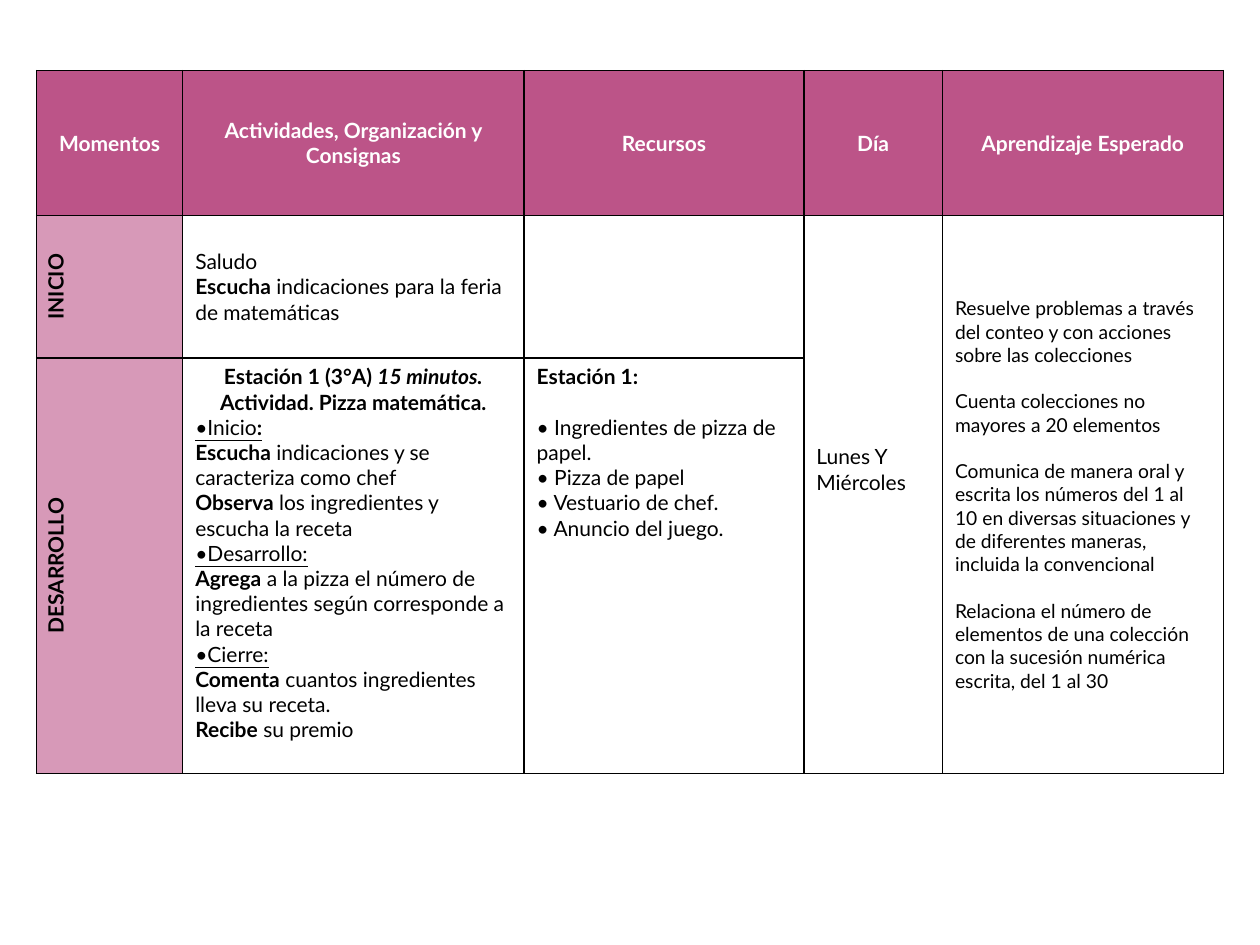
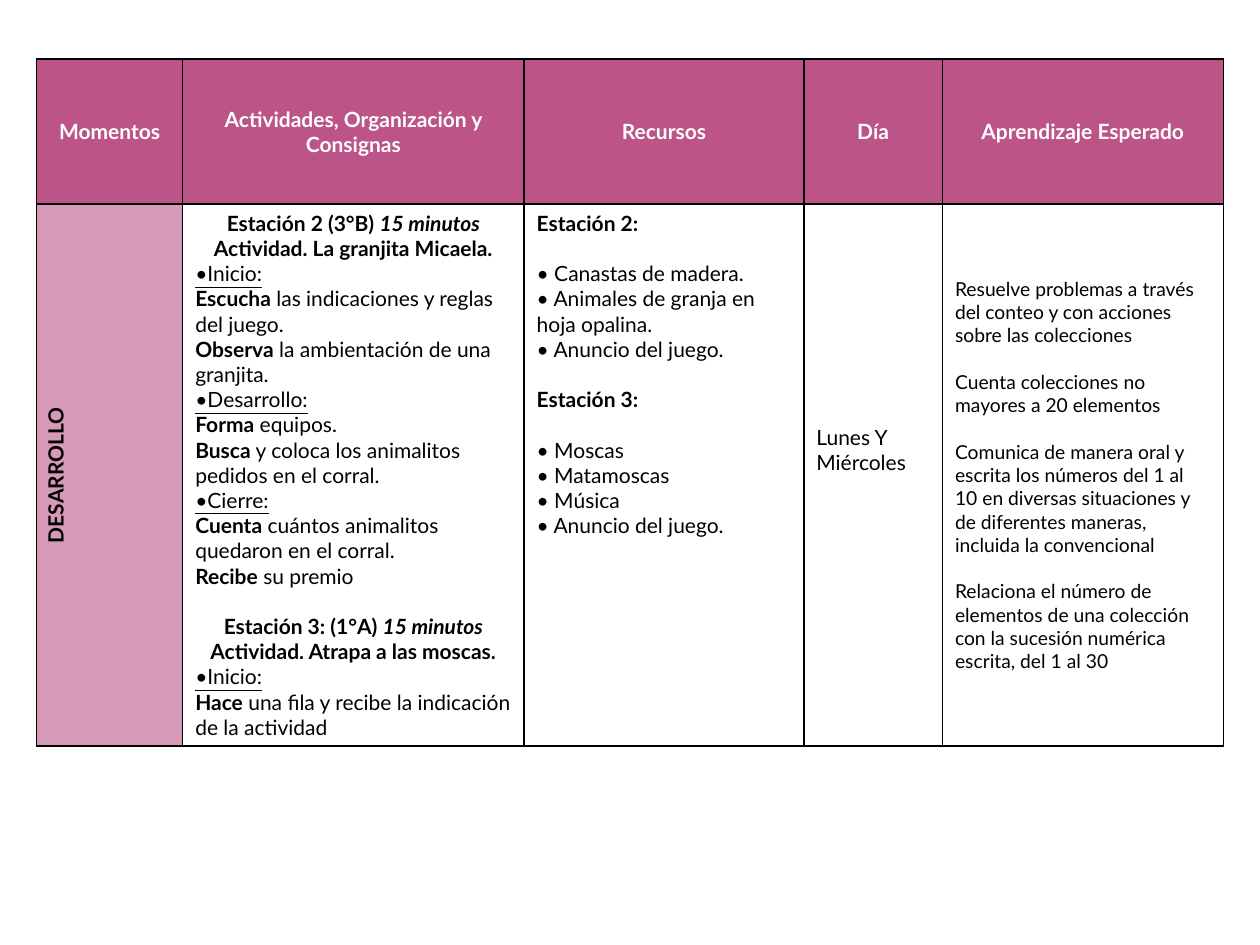
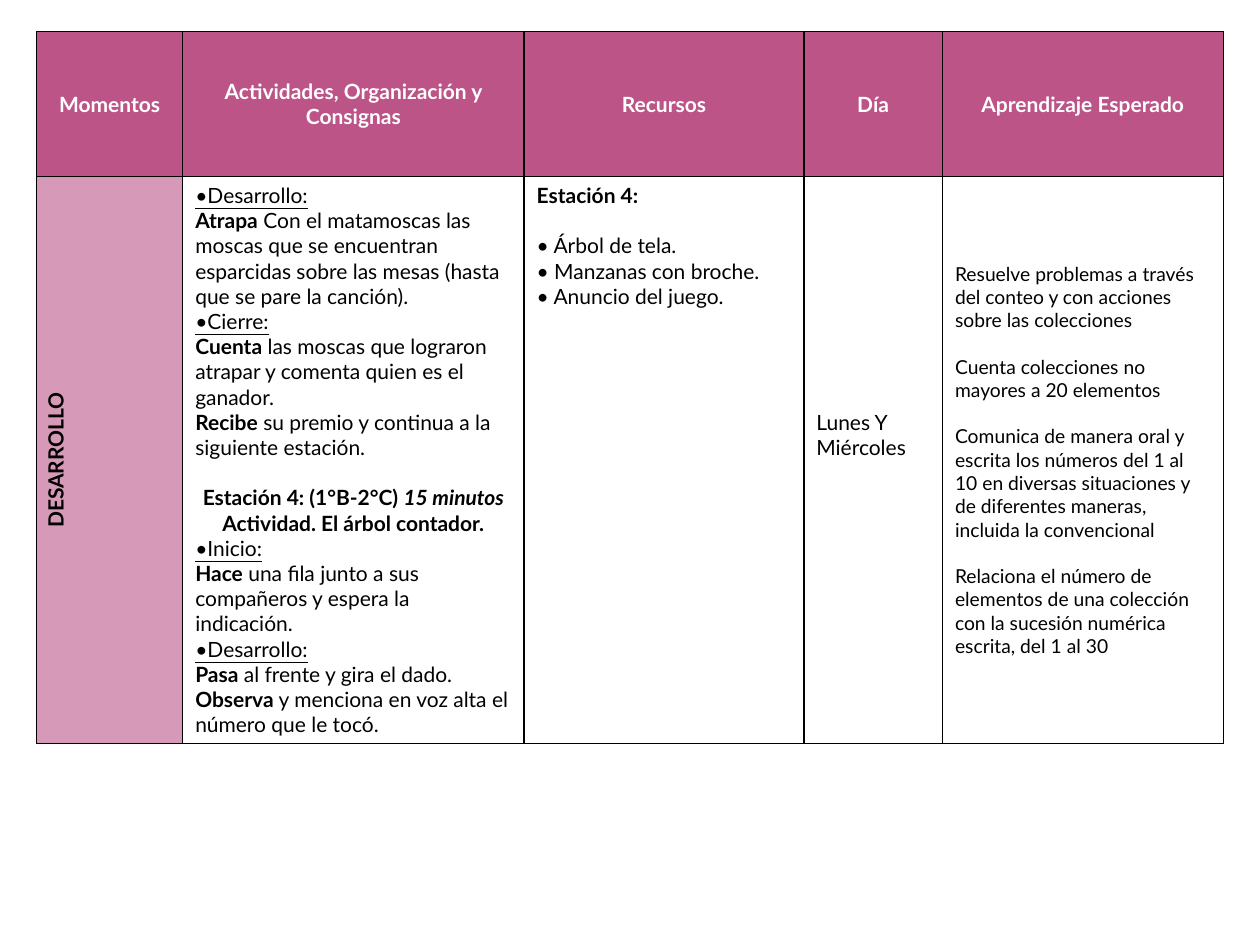
from dataclasses import dataclass

from lxml.etree import SubElement
from pptx import Presentation
from pptx.dml.color import RGBColor
from pptx.enum.text import MSO_ANCHOR, PP_ALIGN
from pptx.oxml.ns import qn
from pptx.table import Table, _Cell
from pptx.util import Inches, Length, Pt

# Shared look
MAGENTA = RGBColor(0xBC, 0x54, 0x88)
PINK = RGBColor(0xD7, 0x99, 0xB8)
WHITE = RGBColor(0xFF, 0xFF, 0xFF)
BLACK = RGBColor(0x00, 0x00, 0x00)
FONT = "Lato"
BODY_SIZE = Pt(12)
LEARNING_SIZE = Pt(11)
LINE_HEIGHT = 1.2
BORDER = Pt(1)

TABLE_LEFT = Inches(0.29)
COLUMN_WIDTHS = [Inches(w) for w in (1.16, 2.71, 2.22, 1.1, 2.23)]
HEADER_HEIGHT = Inches(1.15)
DAY_MARGIN_BOTTOM = Inches(0.45)  # lifts the day above the middle
HEADERS = ["Momentos", "Actividades, Organización y Consignas", "Recursos",
           "Día", "Aprendizaje Esperado"]
MOMENT, ACTIVITIES, RESOURCES, DAY, LEARNING = range(len(HEADERS))


@dataclass(frozen=True)
class Span:
    text: str
    bold: bool = False
    italic: bool = False
    underline: bool = False


@dataclass(frozen=True)
class Line:
    spans: tuple[Span, ...]
    centered: bool = False
    gap: bool = False  # leaves one line free above


@dataclass(frozen=True)
class Moment:
    name: str
    height: Length
    activities: list[Line]
    resources: list[Line]
    anchor: MSO_ANCHOR = MSO_ANCHOR.TOP


@dataclass(frozen=True)
class Plan:
    top: Length
    moments: list[Moment]


# Kinds of line
def plain(text: str, gap: bool = False) -> Line:
    return Line((Span(text),), gap=gap)


def label(text: str, centered: bool = False, gap: bool = False) -> Line:
    return Line((Span(text, bold=True),), centered, gap)


def step(verb: str, rest: str) -> Line:
    return Line((Span(verb, bold=True), Span(f" {rest}")))


def phase(name: str) -> Line:
    return Line((Span(f"•{name}:", underline=True),))


def station(name: str, minutes: str, activity: str, gap: bool = False) -> list[Line]:
    title = Line((Span(f"{name} ", bold=True),
                  Span(minutes, bold=True, italic=True)), True, gap)
    return [title, label(f"Actividad. {activity}", centered=True)]


def supplies(name: str, items: list[str], gap: bool = False) -> list[Line]:
    return [label(f"{name}:", gap=gap)] + [
        plain(f"• {item}", gap=index == 0) for index, item in enumerate(items)]


# Content
DAYS = [plain("Lunes Y Miércoles")]
LEARNINGS = [plain(text, gap=index > 0) for index, text in enumerate([
    "Resuelve problemas a través del conteo y con acciones sobre las colecciones",
    "Cuenta colecciones no mayores a 20 elementos",
    "Comunica de manera oral y escrita los números del 1 al 10 en diversas "
    "situaciones y de diferentes maneras, incluida la convencional",
    "Relaciona el número de elementos de una colección con la sucesión "
    "numérica escrita, del 1 al 30",
])]

PLANS = [
    Plan(Inches(0.56), [
        Moment("INICIO", Inches(1.13), [
            plain("Saludo"),
            step("Escucha", "indicaciones para la feria de matemáticas"),
        ], [], MSO_ANCHOR.MIDDLE),
        Moment("DESARROLLO", Inches(3.3), [
            *station("Estación 1 (3°A)", "15 minutos.", "Pizza matemática."),
            Line((Span("•Inicio", underline=True),
                  Span(":", bold=True, underline=True))),
            step("Escucha", "indicaciones y se caracteriza como chef"),
            step("Observa", "los ingredientes y escucha la receta"),
            phase("Desarrollo"),
            step("Agrega", "a la pizza el número de ingredientes según "
                           "corresponde a la receta"),
            phase("Cierre"),
            step("Comenta", "cuantos ingredientes lleva su receta."),
            step("Recibe", "su premio"),
        ], supplies("Estación 1", [
            "Ingredientes de pizza de papel.", "Pizza de papel",
            "Vestuario de chef.", "Anuncio del juego."])),
    ]),
    Plan(Inches(0.47), [
        Moment("DESARROLLO", Inches(4.29), [
            *station("Estación 2 (3°B)", "15 minutos", "La granjita Micaela."),
            phase("Inicio"),
            step("Escucha", "las indicaciones y reglas del juego."),
            step("Observa", "la ambientación de una granjita."),
            phase("Desarrollo"),
            step("Forma", "equipos."),
            step("Busca", "y coloca los animalitos pedidos en el corral."),
            phase("Cierre"),
            step("Cuenta", "cuántos animalitos quedaron en el corral."),
            step("Recibe", "su premio"),
            *station("Estación 3: (1°A)", "15 minutos",
                     "Atrapa a las moscas.", gap=True),
            phase("Inicio"),
            step("Hace", "una fila y recibe la indicación de la actividad"),
        ], [
            *supplies("Estación 2", [
                "Canastas de madera.", "Animales de granja en hoja opalina.",
                "Anuncio del juego."]),
            *supplies("Estación 3", [
                "Moscas", "Matamoscas", "Música", "Anuncio del juego."], gap=True),
        ]),
    ]),
    Plan(Inches(0.25), [
        Moment("DESARROLLO", Inches(4.5), [
            phase("Desarrollo"),
            step("Atrapa", "Con el matamoscas las moscas que se encuentran "
                           "esparcidas sobre las mesas (hasta que se pare la canción)."),
            phase("Cierre"),
            step("Cuenta", "las moscas que lograron atrapar y comenta quien es "
                           "el ganador."),
            step("Recibe", "su premio y continua a la siguiente estación."),
            *station("Estación 4: (1°B-2°C)", "15 minutos",
                     "El árbol contador.", gap=True),
            phase("Inicio"),
            step("Hace", "una fila junto a sus compañeros y espera la indicación."),
            phase("Desarrollo"),
            step("Pasa", "al frente y gira el dado."),
            step("Observa", "y menciona en voz alta el número que le tocó."),
        ], supplies("Estación 4", [
            "Árbol de tela.", "Manzanas con broche.", "Anuncio del juego."])),
    ]),
]


# Drawing
def style_cell(cell: _Cell, fill: RGBColor | None) -> None:
    properties = cell._tc.get_or_add_tcPr()
    for side in ("a:lnL", "a:lnR", "a:lnT", "a:lnB"):
        border = SubElement(properties, qn(side), w=str(BORDER))
        SubElement(SubElement(border, qn("a:solidFill")), qn("a:srgbClr"), val=str(BLACK))
    if fill is None:
        cell.fill.background()
    else:
        cell.fill.solid()
        cell.fill.fore_color.rgb = fill


def write_cell(cell: _Cell, lines: list[Line], anchor: MSO_ANCHOR = MSO_ANCHOR.MIDDLE,
               color: RGBColor = BLACK, size: Length = BODY_SIZE) -> None:
    cell.vertical_anchor = anchor
    for index, line in enumerate(lines):
        frame = cell.text_frame
        paragraph = frame.add_paragraph() if index else frame.paragraphs[0]
        paragraph.alignment = PP_ALIGN.CENTER if line.centered else PP_ALIGN.LEFT
        if line.gap:
            paragraph.space_before = Pt(size.pt * LINE_HEIGHT)
        paragraph.font.name = FONT
        paragraph.font.size = size
        paragraph.font.color.rgb = color
        for span in line.spans:
            run = paragraph.add_run()
            run.text = span.text
            run.font.bold = span.bold
            run.font.italic = span.italic
            run.font.underline = span.underline


def fill_moment(table: Table, row: int, moment: Moment) -> None:
    table.rows[row].height = moment.height
    for column in range(len(HEADERS)):
        style_cell(table.cell(row, column), PINK if column == MOMENT else None)
    name_cell = table.cell(row, MOMENT)
    name_cell._tc.get_or_add_tcPr().set("vert", "vert270")
    write_cell(name_cell, [label(moment.name, centered=True)])
    write_cell(table.cell(row, ACTIVITIES), moment.activities, moment.anchor)
    write_cell(table.cell(row, RESOURCES), moment.resources, MSO_ANCHOR.TOP)


def add_plan(presentation: Presentation, plan: Plan) -> None:
    slide = presentation.slides.add_slide(presentation.slide_layouts[6])
    height = HEADER_HEIGHT + sum(moment.height for moment in plan.moments)
    table = slide.shapes.add_table(
        len(plan.moments) + 1, len(HEADERS), TABLE_LEFT, plan.top,
        sum(COLUMN_WIDTHS), height).table
    table.first_row = table.horz_banding = False

    # Header row
    table.rows[0].height = HEADER_HEIGHT
    for column, (title, width) in enumerate(zip(HEADERS, COLUMN_WIDTHS)):
        table.columns[column].width = width
        style_cell(table.cell(0, column), MAGENTA)
        write_cell(table.cell(0, column), [label(title, centered=True)], color=WHITE)

    # Moments, with day and learning shared by all of them
    for row, moment in enumerate(plan.moments, start=1):
        fill_moment(table, row, moment)
    last_row = len(plan.moments)
    for column, lines, size in ((DAY, DAYS, BODY_SIZE),
                                (LEARNING, LEARNINGS, LEARNING_SIZE)):
        if last_row > 1:
            table.cell(1, column).merge(table.cell(last_row, column))
        write_cell(table.cell(1, column), lines, size=size)
    table.cell(1, DAY).margin_bottom = DAY_MARGIN_BOTTOM


def main() -> None:
    presentation = Presentation()
    presentation.slide_width = Inches(10)
    presentation.slide_height = Inches(7.5)
    for plan in PLANS:
        add_plan(presentation, plan)
    presentation.save("out.pptx")


if __name__ == "__main__":
    main()
